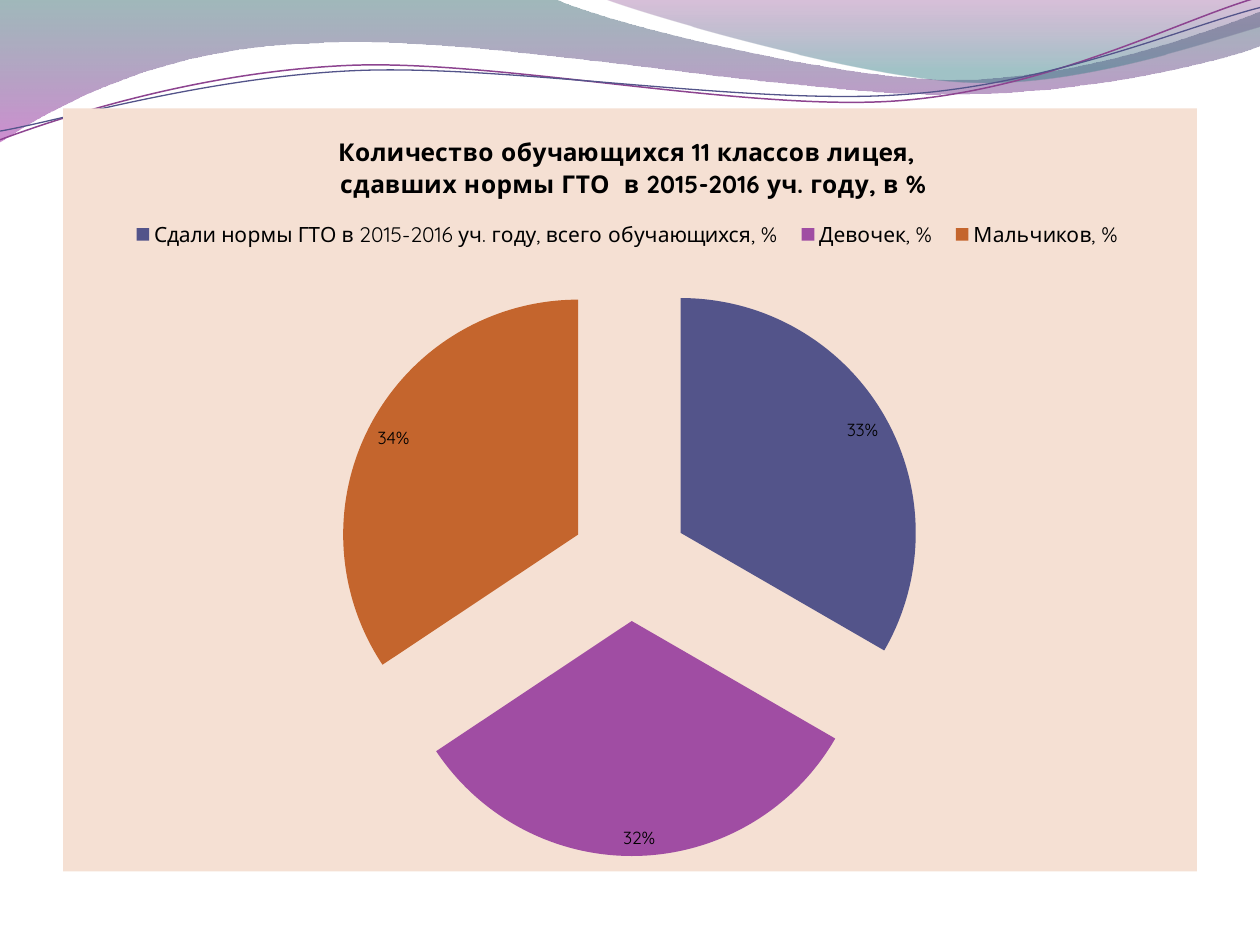
from lxml import etree
from pptx import Presentation
from pptx.chart.data import CategoryChartData
from pptx.dml.color import RGBColor
from pptx.enum import chart as ch
from pptx.oxml import parse_xml
from pptx.oxml.ns import nsdecls, qn
from pptx.util import Pt

FONT = "Quicksand"
BLACK = RGBColor(0, 0, 0)
SAND = RGBColor(0xF5, 0xE0, 0xD3)
PINE = RGBColor(0x2D, 0x63, 0x68)
VIOLET = RGBColor(0xA5, 0x30, 0xA9)
PLUM = RGBColor(0x7F, 0x2F, 0x82)
TEAL = RGBColor(0x2F, 0x7B, 0x82)
MAUVE = RGBColor(0x8D, 0x44, 0x90)
INDIGO = RGBColor(0x53, 0x54, 0x8A)
SEA = RGBColor(0x43, 0x80, 0x86)
PURPLE = RGBColor(0xA0, 0x4D, 0xA3)
RUST = RGBColor(0xC4, 0x65, 0x2D)

# Wave outlines: a start, then lines (x, y) or curves (two controls, end)
BAND = [(0, 0), (316.8, -0.7), (342.7, 12.2, 478.1, 45.4, 545.8, 45.4),
        (614.2, 45.4, 689.8, 18.7, 720, 6.5), (720.7, 25.9),
        (707.8, 31.7, 626.4, 54.7, 537.1, 54),
        (447.8, 54, 275, 20.2, 185, 24.5),
        (92.9, 25.9, 33.1, 59.8, -0.7, 81.4)]
CREST = [(344.9, -0.7), (366.5, 7.9, 491, 44.6, 553.7, 46.8),
         (616.3, 49.7, 691.9, 23, 720, 15.1), (720, 0)]
UPPER = [(0, 79.9), (34.6, 67, 113.8, 41, 199.4, 37.4),
         (284.4, 33.8, 427, 64.1, 513.4, 57.6),
         (599.8, 51.1, 675.4, 10.8, 718.6, -1.4)]
LOWER = [(0, 74.9), (33.8, 69.1, 118.1, 43.9, 203.8, 40.3),
         (290.2, 36.7, 429.8, 60.5, 516.2, 54),
         (601.9, 48.2, 677.5, 15.1, 720, 4.3)]

TITLE = ["Количество обучающихся 11 классов лицея, ",
         " сдавших нормы ГТО  в 2015-2016 уч. году, в %"]
SLICES = [
    ("Сдали нормы ГТО в 2015-2016 уч. году, всего обучающихся, %", 33, INDIGO),
    ("", None, SEA),
    ("Девочек, %", 32, PURPLE),
    ("Мальчиков, % ", 34, RUST),
]


def wave(slide, path, close):
    """Draw an outline, then bend its curved stretches."""
    pts = [(Pt(seg[i]), Pt(seg[i + 1]))
           for seg in path for i in range(0, len(seg), 2)]
    pen = slide.shapes.build_freeform(*pts[0])
    pen.add_line_segments(pts[1:], close=close)
    shape = pen.convert_to_shape()
    shape.shadow.inherit = False

    steps = iter(list(shape._element.iter(qn("a:lnTo"))))
    for seg in path[1:]:
        step = next(steps)
        if len(seg) == 6:
            curve = etree.Element(qn("a:cubicBezTo"))
            step.addprevious(curve)
            for part in (step, next(steps), next(steps)):
                curve.append(part[0])
                part.getparent().remove(part)
    return shape


def ribbon(slide, path, stops):
    """Filled wave; stops are (position, colour, opacity %)."""
    shape = wave(slide, path, True)
    shape.line.fill.background()
    shape.fill.gradient()
    shape.fill.gradient_angle = 270
    for stop, (pos, color, alpha) in zip(shape.fill.gradient_stops, stops):
        stop.position = pos
        stop.color.rgb = color
    nodes = shape._element.spPr.iter(qn("a:srgbClr"))
    for node, (pos, color, alpha) in zip(nodes, stops):
        etree.SubElement(node, qn("a:alpha")).set("val", str(alpha * 1000))


def strand(slide, path, color, width):
    shape = wave(slide, path, False)
    shape.fill.background()
    shape.line.color.rgb = color
    shape.line.width = Pt(width)


def style(font, size, bold=False):
    font.name, font.size, font.bold = FONT, Pt(size), bold
    font.color.rgb = BLACK


def layout(x, y, w, h, inner=False):
    """Fixed place inside the chart, as shares of its size."""
    target = '<c:layoutTarget val="inner"/>' if inner else ""
    return parse_xml(
        f'<c:layout {nsdecls("c")}><c:manualLayout>{target}'
        '<c:xMode val="edge"/><c:yMode val="edge"/>'
        f'<c:x val="{x}"/><c:y val="{y}"/><c:w val="{w}"/><c:h val="{h}"/>'
        '</c:manualLayout></c:layout>')


def place(parent, node, after=None):
    for old in parent.findall(qn("c:layout")):
        parent.remove(old)
    if after is None:
        parent.insert(0, node)
    else:
        after.addnext(node)


def head(chart):
    frame = chart.chart_title.text_frame
    for i, line in enumerate(TITLE):
        para = frame.add_paragraph() if i else frame.paragraphs[0]
        run = para.add_run()
        run.text = line
        style(run.font, 14, True)
    chart.chart_title.include_in_layout = False


def key(chart):
    chart.has_legend = True
    chart.legend.position = ch.XL_LEGEND_POSITION.TOP
    chart.legend.include_in_layout = False
    style(chart.legend.font, 12)
    # The unnamed slice stays out of the legend
    entry = parse_xml(f'<c:legendEntry {nsdecls("c")}><c:idx val="1"/>'
                      '<c:delete val="1"/></c:legendEntry>')
    box = chart.legend._element
    box.find(qn("c:legendPos")).addnext(entry)
    place(box, layout(0.05, 0.14, 0.9, 0.05), entry)


def pie(slide):
    data = CategoryChartData()
    data.categories = [name for name, val, color in SLICES]
    data.add_series("Series 1", [val for name, val, color in SLICES])
    chart = slide.shapes.add_chart(ch.XL_CHART_TYPE.PIE, Pt(36), Pt(62),
                                   Pt(648), Pt(436), data).chart
    style(chart.font, 10)
    head(chart)
    key(chart)

    # Slices, pulled apart
    plot = chart.plots[0]
    plot.vary_by_categories = True
    ser = plot.series[0]
    for i, (name, val, color) in enumerate(SLICES):
        fill = ser.points[i].format.fill
        fill.solid()
        fill.fore_color.rgb = color
    ser._element.find(qn("c:tx")).addnext(
        parse_xml(f'<c:explosion {nsdecls("c")} val="25"/>'))
    place(plot._element.getparent(), layout(0.24, 0.21, 0.52, 0.77, True))

    # Percent labels
    tags = ser.data_labels
    tags.show_percentage = True
    tags.show_value = False
    tags.position = ch.XL_LABEL_POSITION.INSIDE_END
    style(tags.font, 10)

    # Chart background
    chart._chartSpace.find(qn("c:chart")).addnext(parse_xml(
        f'<c:spPr {nsdecls("c", "a")}><a:solidFill><a:srgbClr val="{SAND}"/>'
        '</a:solidFill><a:ln><a:noFill/></a:ln></c:spPr>'))


def main():
    prs = Presentation()
    prs.slide_width, prs.slide_height = Pt(720), Pt(540)
    slide = prs.slides.add_slide(prs.slide_layouts[6])

    # Waves along the top
    ribbon(slide, BAND, [(0, PINE, 45), (1, VIOLET, 55)])
    ribbon(slide, CREST, [(0, PLUM, 30), (0.8, TEAL, 45)])
    strand(slide, UPPER, MAUVE, 0.85)
    strand(slide, LOWER, INDIGO, 0.75)

    pie(slide)
    prs.save("out.pptx")


if __name__ == "__main__":
    main()
